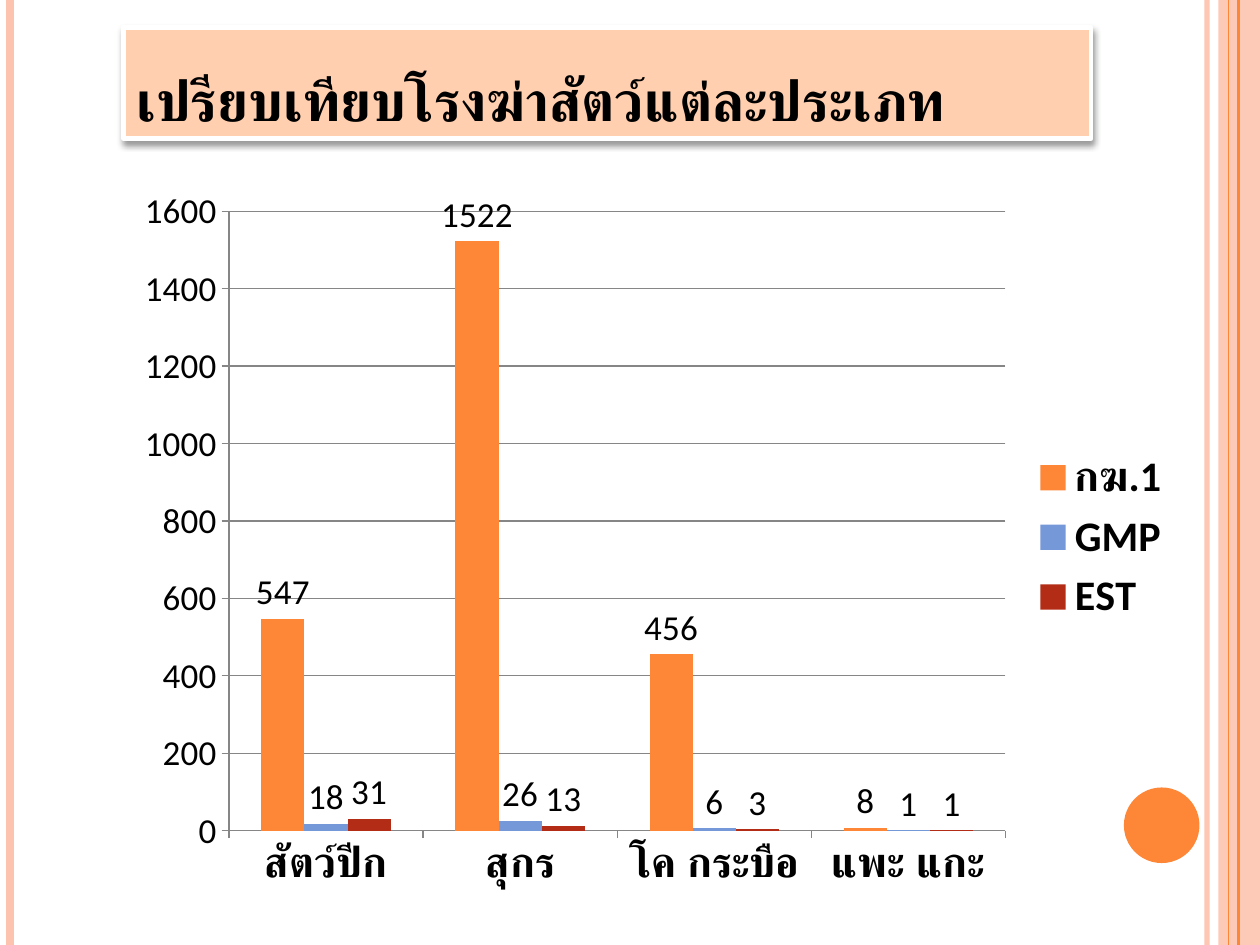
from dataclasses import dataclass

from lxml import etree
from pptx import Presentation
from pptx.chart.data import CategoryChartData
from pptx.dml.color import RGBColor
from pptx.enum.chart import XL_CHART_TYPE, XL_LABEL_POSITION, XL_LEGEND_POSITION, XL_TICK_MARK
from pptx.enum.shapes import MSO_CONNECTOR, MSO_SHAPE
from pptx.enum.text import MSO_ANCHOR, MSO_AUTO_SIZE, PP_ALIGN
from pptx.oxml.ns import qn
from pptx.util import Inches, Pt

COLUMN = XL_CHART_TYPE.COLUMN_CLUSTERED
OUT_END = XL_LABEL_POSITION.OUTSIDE_END
RIGHT = XL_LEGEND_POSITION.RIGHT
TICK_OUT = XL_TICK_MARK.OUTSIDE
STRAIGHT = MSO_CONNECTOR.STRAIGHT
RECT, OVAL = MSO_SHAPE.RECTANGLE, MSO_SHAPE.OVAL
BOTTOM = MSO_ANCHOR.BOTTOM
FIXED = MSO_AUTO_SIZE.NONE
LEFT = PP_ALIGN.LEFT


@dataclass(frozen=True)
class Theme:
    font: str = "Calibri"
    ink: str = "000000"
    white: str = "FFFFFF"
    orange: str = "FE8637"
    pink: str = "FEC3AE"
    peach: str = "FFCFAF"
    blue: str = "7598D9"
    red: str = "B32C16"
    grid: str = "868686"
    title: float = 32
    label: float = 24
    value: float = 20


@dataclass(frozen=True)
class Stripe:
    left: float
    width: float
    color: str
    alpha: int = 100


@dataclass(frozen=True)
class Block:
    kind: int
    left: float
    top: float
    width: float
    height: float
    color: str
    alpha: int = 100


@dataclass(frozen=True)
class Series:
    name: str
    values: tuple
    color: str


THEME = Theme()
WIDE, HIGH = 10, 7.5
STRIPES = (
    Stripe(9.58, 3, THEME.pink, 93),
    Stripe(0.08, 4.5, THEME.pink),
    Stripe(9.83, 1.5, THEME.orange),
    Stripe(9.75, 0.75, THEME.orange),
)
BAND = Block(RECT, 9.67, 0, 0.33, HIGH, THEME.pink, 87)
DOT = Block(OVAL, 8.92, 6.25, 0.6, 0.6, THEME.orange)
GROUPS = ("สัตว์ปีก", "สุกร", "โค กระบือ", "แพะ แกะ")
SERIES = (
    Series("กฆ.1", (547, 1522, 456, 8), THEME.orange),
    Series("GMP", (18, 26, 6, 1), THEME.blue),
    Series("EST", (31, 13, 3, 1), THEME.red),
)


def paint(fill, color: str, alpha: int = 100) -> None:
    fill.solid()
    fill.fore_color.rgb = RGBColor.from_string(color)
    if alpha < 100:
        node = fill._xPr.find(".//" + qn("a:srgbClr"))
        etree.SubElement(node, qn("a:alpha"), val=str(alpha * 1000))


def style(font, size: float, bold: bool = False, color: str = THEME.ink) -> None:
    font.name, font.size, font.bold = THEME.font, Pt(size), bold
    font.color.rgb = RGBColor.from_string(color)


def write(frame, text: str, *, size: float, bold: bool = False, small: bool = False) -> None:
    para = frame.paragraphs[0]
    para.alignment = LEFT
    run = para.add_run()
    run.text = text
    style(run.font, size, bold)
    if small:
        run.font._element.set("cap", "small")


def add_stripe(slide, item: Stripe) -> None:
    left = Inches(item.left)
    line = slide.shapes.add_connector(STRAIGHT, left, 0, left, Inches(HIGH))
    line.line.width = Pt(item.width)
    paint(line.line.fill, item.color, item.alpha)
    etree.SubElement(line._element.spPr, qn("a:effectLst"))


def add_block(slide, item: Block) -> None:
    box = map(Inches, (item.left, item.top, item.width, item.height))
    shape = slide.shapes.add_shape(item.kind, *box)
    shape.shadow.inherit = False
    paint(shape.fill, item.color, item.alpha)
    shape.line.fill.background()


def add_shadow(shape, color: str, alpha: int, blur: float, gap: float) -> None:
    shape.shadow.inherit = False
    holder = shape._element.spPr.find(qn("a:effectLst"))
    outer = etree.SubElement(
        holder, qn("a:outerShdw"), blurRad=str(Pt(blur)), dist=str(Pt(gap)),
        dir="5400000", rotWithShape="0",
    )
    tint = etree.SubElement(outer, qn("a:srgbClr"), val=color)
    etree.SubElement(tint, qn("a:alpha"), val=str(alpha * 1000))


def set_title(slide, text: str) -> None:
    title = slide.shapes.title
    title.left, title.top = Inches(0.98), Inches(0.22)
    title.width, title.height = Inches(7.68), Inches(0.88)
    paint(title.fill, THEME.peach)
    paint(title.line.fill, THEME.white)
    title.line.width = Pt(2.75)
    add_shadow(title, THEME.ink, 40, 4, 2)
    frame = title.text_frame
    frame.auto_size = FIXED
    frame.word_wrap = True
    frame.vertical_anchor = BOTTOM
    write(frame, text, size=THEME.title, bold=True, small=True)


def add_bars(slide) -> None:
    data = CategoryChartData()
    data.categories = GROUPS
    for item in SERIES:
        data.add_series(item.name, item.values)
    box = map(Inches, (0.98, 1.39, 8.43, 5.75))
    chart = slide.shapes.add_chart(COLUMN, *box, data).chart
    chart.has_title = False
    style(chart.font, THEME.value)
    chart.has_legend = True
    chart.legend.position = RIGHT
    chart.legend.include_in_layout = False
    style(chart.legend.font, THEME.label, bold=True)

    groups, scale = chart.category_axis, chart.value_axis
    style(groups.tick_labels.font, THEME.label, bold=True)
    scale.has_major_gridlines = True
    for axis in (groups, scale):
        axis.major_tick_mark = TICK_OUT
    for line in (groups.format.line, scale.format.line, scale.major_gridlines.format.line):
        line.width = Pt(0.75)
        paint(line.fill, THEME.grid)

    plot = chart.plots[0]
    plot.gap_width = 150
    plot.vary_by_categories = False
    for item, bars in zip(SERIES, plot.series):
        paint(bars.format.fill, item.color)
        bars.invert_if_negative = False
        labels = bars.data_labels
        labels.show_value = True
        labels.position = OUT_END
        style(labels.font, THEME.value)


def main() -> None:
    deck = Presentation()
    deck.slide_width, deck.slide_height = Inches(WIDE), Inches(HIGH)
    slide = deck.slides.add_slide(deck.slide_layouts[5])
    paint(slide.background.fill, THEME.white)
    add_block(slide, BAND)
    for item in STRIPES:
        add_stripe(slide, item)
    add_block(slide, DOT)
    add_bars(slide)
    set_title(slide, "เปรียบเทียบโรงฆ่าสัตว์แต่ละประเภท")
    deck.save("out.pptx")


if __name__ == "__main__":
    main()
